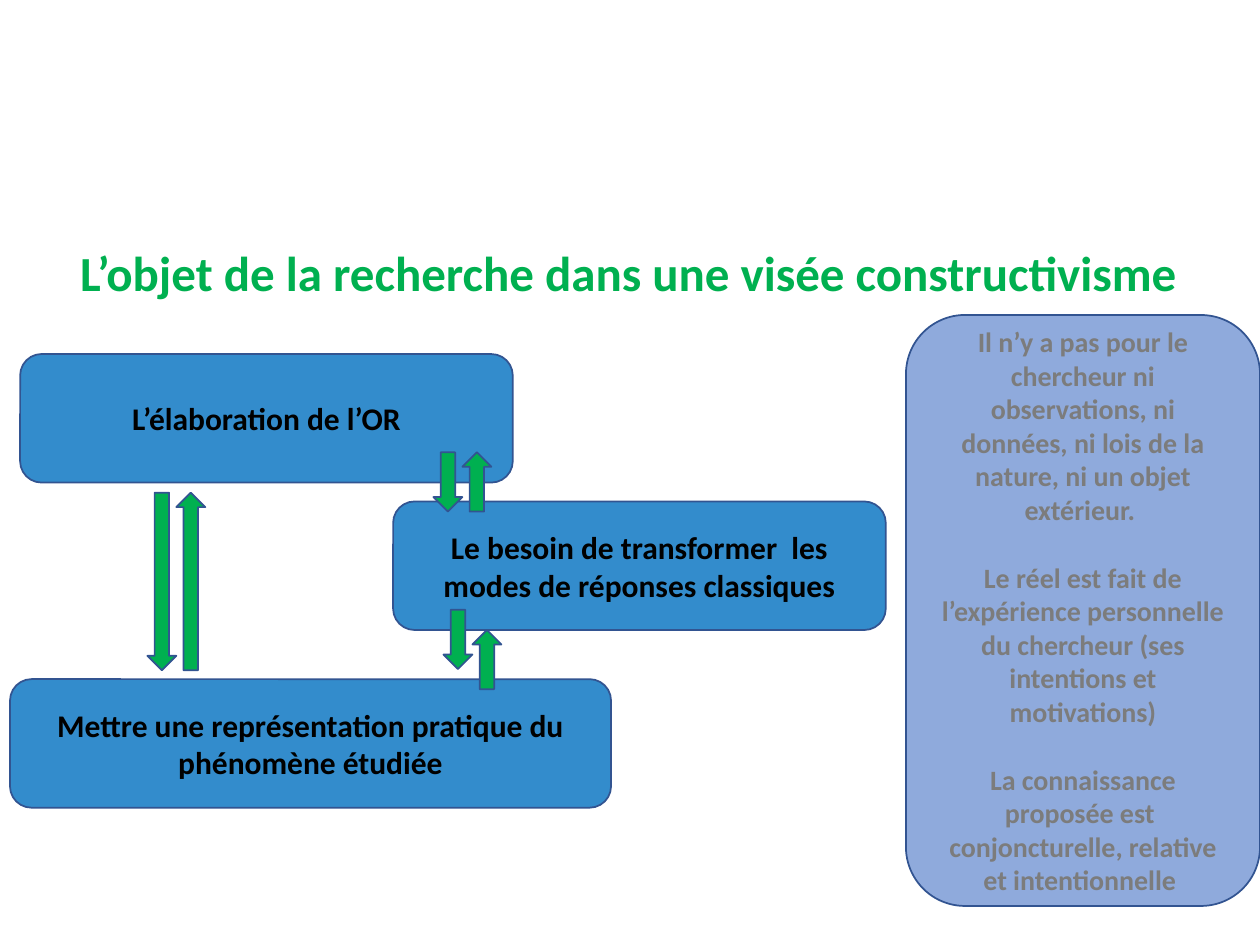
from dataclasses import dataclass

from lxml import etree
from pptx import Presentation
from pptx import util as u
from pptx.dml.color import RGBColor
from pptx.enum import shapes, text
from pptx.oxml import ns


@dataclass(frozen=True)
class Theme:
    font: str = "Calibri"
    green: str = "00B050"
    step: str = "0070C0"
    step_opacity: int = 80
    panel: str = "8FAADC"
    outline: str = "325491"
    step_text: str = "000000"
    panel_text: str = "7C7C7C"
    title_size: int = 28
    step_size: int = 18
    panel_size: int = 16


THEME = Theme()
SHAPE = shapes.MSO_SHAPE
ANCHOR = text.MSO_ANCHOR

STEP_HEIGHT = 1.02
STEPS = [  # left, top, width, label
    (3.12, 3.98, 3.91, "Le besoin de transformer  les modes de réponses classiques"),
    (0.16, 2.81, 3.91, "L’élaboration de l’OR"),
    (0.08, 5.39, 4.77, "Mettre une représentation pratique du phénomène étudiée"),
]

ARROW_WIDTH = 0.23
ARROW_PAIRS = [  # left, top of down arrow, top of up arrow, height
    (3.52, 4.84, 5.0, 0.47),
    (3.44, 3.59, 3.59, 0.47),
    (1.17, 3.91, 3.91, 1.41),
]

PANEL_TEXTS = [
    "Il n’y a pas pour le chercheur ni observations, ni données, "
    "ni lois de la nature, ni un objet extérieur. ",
    "Le réel est fait de l’expérience personnelle du chercheur "
    "(ses intentions et motivations)",
    "La connaissance proposée est  conjoncturelle, relative et intentionnelle ",
]


def write(shape, lines, size, color, anchor=ANCHOR.MIDDLE, gap=0):
    frame = shape.text_frame
    frame.word_wrap = True
    frame.vertical_anchor = anchor
    frame.text = "\n".join(lines)
    for index, paragraph in enumerate(frame.paragraphs):
        paragraph.alignment = text.PP_ALIGN.CENTER
        if index:
            paragraph.space_before = u.Pt(gap)
        for run in paragraph.runs:
            run.font.name = THEME.font
            run.font.size = u.Pt(size)
            run.font.bold = True
            run.font.color.rgb = RGBColor.from_string(color)
    return frame


def add_box(slide, kind, box, fill, opacity=100):
    shape = slide.shapes.add_shape(kind, *map(u.Inches, box))
    shape.shadow.inherit = False
    shape.fill.solid()
    shape.fill.fore_color.rgb = RGBColor.from_string(fill)
    shape.line.color.rgb = RGBColor.from_string(THEME.outline)
    shape.line.width = u.Pt(1)
    if opacity < 100:
        color = shape._element.spPr.find(ns.qn("a:solidFill"))[0]
        etree.SubElement(color, ns.qn("a:alpha"), val=str(opacity * 1000))
    return shape


def add_title(slide, box):
    shape = slide.shapes.add_textbox(*map(u.Inches, box))
    frame = write(shape, ["L’objet de la recherche dans une visée constructivisme"],
                  THEME.title_size, THEME.green, anchor=ANCHOR.TOP)
    frame.margin_top = u.Inches(1.67)
    frame.paragraphs[0].line_spacing = 0.9


def add_step(slide, box, label):
    shape = add_box(slide, SHAPE.ROUNDED_RECTANGLE, box, THEME.step, THEME.step_opacity)
    write(shape, [label], THEME.step_size, THEME.step_text)


def add_arrow_pair(slide, left, down_top, up_top, height):
    add_box(slide, SHAPE.DOWN_ARROW, (left, down_top, ARROW_WIDTH, height), THEME.green)
    add_box(slide, SHAPE.UP_ARROW, (left + ARROW_WIDTH, up_top, ARROW_WIDTH, height),
            THEME.green)


def add_panel(slide, box):
    shape = add_box(slide, SHAPE.ROUNDED_RECTANGLE, box, THEME.panel)
    # The gap equals one line of text
    write(shape, PANEL_TEXTS, THEME.panel_size, THEME.panel_text, gap=19.5)


def main():
    presentation = Presentation()
    presentation.slide_width = u.Inches(10)
    presentation.slide_height = u.Inches(7.5)
    slide = presentation.slides.add_slide(presentation.slide_layouts[6])

    # Title
    add_title(slide, (0.47, 0.31, 9.03, 6.33))

    # Steps and the arrows between them
    for left, top, width, label in STEPS:
        add_step(slide, (left, top, width, STEP_HEIGHT), label)
    for pair in ARROW_PAIRS:
        add_arrow_pair(slide, *pair)

    # Side panel
    add_panel(slide, (7.19, 2.5, 2.81, 4.69))

    presentation.save("out.pptx")


if __name__ == "__main__":
    main()
